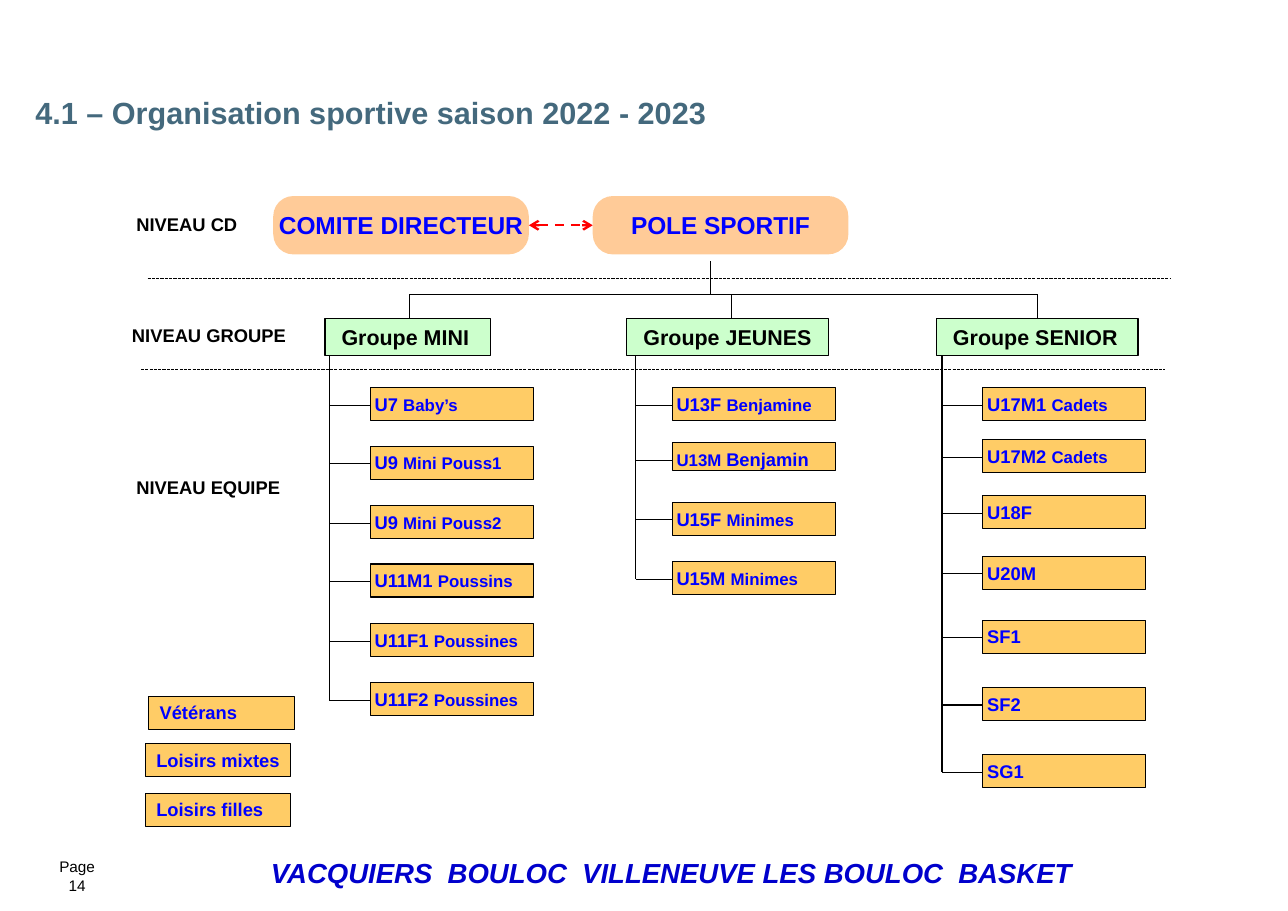
from dataclasses import dataclass

from pptx import Presentation
from pptx.dml.color import RGBColor
from pptx.enum.dml import MSO_LINE
from pptx.enum.shapes import MSO_CONNECTOR, MSO_SHAPE
from pptx.enum.text import MSO_ANCHOR, MSO_AUTO_SIZE, PP_ALIGN
from pptx.oxml.ns import qn
from pptx.util import Inches, Pt

# Content: every length is in inches
TITLE = "4.1 – Organisation sportive saison 2022 - 2023"
CLUB = "VACQUIERS  BOULOC  VILLENEUVE LES BOULOC  BASKET"
PAGE = "Page 14"
LEVELS = [("NIVEAU CD", 1.14, 1.89), ("NIVEAU GROUPE", 1.1, 2.89),
          ("NIVEAU EQUIPE", 1.14, 4.27)]
BOARDS = [("COMITE DIRECTEUR", 2.48), ("POLE SPORTIF", 5.38)]
LEISURE = [("Vétérans", 1.35, 6.32), ("Loisirs mixtes", 1.32, 6.75),
           ("Loisirs filles", 1.32, 7.2)]
GROUPS = [
    dict(name="Groupe MINI", left=2.95, width=1.5, drop=3.72, spine=2.99,
         team_left=3.36, teams=[
             (3.52, "U7", "Baby’s"), (4.05, "U9", "Mini Pouss1"),
             (4.59, "U9", "Mini Pouss2"), (5.12, "U11M1", "Poussins"),
             (5.66, "U11F1", "Poussines"), (6.2, "U11F2", "Poussines")]),
    dict(name="Groupe JEUNES", left=5.69, width=1.83, drop=6.64, spine=5.77,
         team_left=6.1, teams=[
             (3.52, "U13F", "Benjamine"), (4.02, "U13M", "Benjamin"),
             (4.56, "U15F", "Minimes"), (5.1, "U15M", "Minimes")]),
    dict(name="Groupe SENIOR", left=8.5, width=1.83, drop=9.42, spine=8.55,
         team_left=8.92, teams=[
             (3.52, "U17M1", "Cadets"), (3.99, "U17M2", "Cadets"),
             (4.5, "U18F", ""), (5.05, "U20M", ""), (5.63, "SF1", ""),
             (6.24, "SF2", ""), (6.85, "SG1", "")]),
]
COMPACT_TEAM = "U13M"  # lower box, with the larger type on its second part
SEPARATORS = [(1.34, 2.53), (1.28, 3.35)]
SEPARATOR_WIDTH = 9.29

BUS_TOP, BUS_BOTTOM, POLE_STEM = 2.67, 2.9, (6.45, 2.37)
GROUP_TOP, GROUP_HEIGHT = 2.89, 0.34
TEAM_WIDTH, TEAM_HEIGHT, COMPACT_HEIGHT, TICK_DROP = 1.48, 0.3, 0.25, 0.16
BOARD_TOP, BOARD_WIDTH, BOARD_HEIGHT = 1.78, 2.32, 0.53


@dataclass(frozen=True)
class Theme:
    font: str = "Arial"
    ink: str = "000000"
    title: str = "44697D"
    club: str = "0000CC"
    team_text: str = "0000FF"
    team_fill: str = "FFCC66"
    group_fill: str = "CCFFCC"
    board_fill: str = "FF9933"
    link: str = "FF0000"
    title_size: float = 20
    club_size: float = 18
    board_size: float = 16
    group_size: float = 14
    label_size: float = 12
    detail_size: float = 11
    page_size: float = 10
    rule: float = 0.75


THEME = Theme()
NO_INSET = (0, 0, 0, 0)
TEAM_INSET = (0.04, 0.05, 0.04, 0.05)
LABEL_INSET = (0.1, 0.05, 0.1, 0.05)
GROUP_INSET = (0.15, 0.05, 0.05, 0.05)

deck = Presentation()
deck.slide_width, deck.slide_height = Inches(11.69), Inches(8.27)
slide = deck.slides.add_slide(deck.slide_layouts[5])


def write(holder, runs, color, inset=LABEL_INSET, align=PP_ALIGN.LEFT,
          anchor=MSO_ANCHOR.TOP, wrap=True, bold=True, italic=False):
    """Put (text, size) runs into one paragraph of the holder."""
    frame = holder.text_frame
    sides = ("margin_left", "margin_top", "margin_right", "margin_bottom")
    settings = dict(zip(sides, map(Inches, inset)), word_wrap=wrap,
                    auto_size=MSO_AUTO_SIZE.NONE, vertical_anchor=anchor)
    for key, value in settings.items():
        setattr(frame, key, value)
    paragraph = frame.paragraphs[0]
    paragraph.alignment = align
    for text, size in runs:
        run = paragraph.add_run()
        run.text = text
        look = dict(name=THEME.font, size=Pt(size), bold=bold, italic=italic)
        for key, value in look.items():
            setattr(run.font, key, value)
        run.font.color.rgb = RGBColor.from_string(color)
    return paragraph


def label(place, *args, **options):
    write(slide.shapes.add_textbox(*map(Inches, place)), *args, **options)


def box(place, fill, preset=MSO_SHAPE.RECTANGLE, outlined=True):
    shape = slide.shapes.add_shape(preset, *map(Inches, place))
    shape.shadow.inherit = False
    shape.fill.solid()
    shape.fill.fore_color.rgb = RGBColor.from_string(fill)
    if outlined:
        shape.line.color.rgb = RGBColor.from_string(THEME.ink)
        shape.line.width = Pt(THEME.rule)
    else:
        shape.line.fill.background()
    return shape


def rule(x1, y1, x2, y2, color=THEME.ink, width=THEME.rule, dash=None):
    line = slide.shapes.add_connector(
        MSO_CONNECTOR.STRAIGHT, *map(Inches, (x1, y1, x2, y2)))
    line.line.color.rgb = RGBColor.from_string(color)
    line.line.width = Pt(width)
    if dash:
        line.line.dash_style = dash
    properties = line._element.spPr
    properties.append(properties.makeelement(qn("a:effectLst"), {}))
    return line


def draw_board(name, left):
    board = box((left, BOARD_TOP, BOARD_WIDTH, BOARD_HEIGHT), THEME.board_fill,
                MSO_SHAPE.ROUNDED_RECTANGLE, outlined=False)
    board.adjustments[0] = 0.345
    tint = board._element.spPr.find(".//" + qn("a:srgbClr"))
    tint.append(tint.makeelement(qn("a:alpha"), {"val": "50000"}))
    write(board, [(name, THEME.board_size)], THEME.team_text,
          align=PP_ALIGN.CENTER, anchor=MSO_ANCHOR.MIDDLE, wrap=False)


def draw_team(left, top, code, detail):
    sizes, height = (THEME.label_size, THEME.detail_size), TEAM_HEIGHT
    if code == COMPACT_TEAM:
        sizes, height = sizes[::-1], COMPACT_HEIGHT
    parts = (code + " ", detail) if detail else (code,)
    write(box((left, top, TEAM_WIDTH, height), THEME.team_fill),
          zip(parts, sizes), THEME.team_text, TEAM_INSET)


def draw_group(name, left, width, drop, spine, team_left, teams):
    rule(drop, BUS_TOP, drop, BUS_BOTTOM)
    rule(spine, GROUP_TOP + GROUP_HEIGHT, spine, teams[-1][0] + TICK_DROP)
    write(box((left, GROUP_TOP, width, GROUP_HEIGHT), THEME.group_fill),
          [(name, THEME.group_size)], THEME.ink, GROUP_INSET)
    for top, code, detail in teams:
        rule(spine, top + TICK_DROP, team_left, top + TICK_DROP)
        draw_team(team_left, top, code, detail)


title = slide.shapes.title
for side, length in dict(left=0.32, top=0.76, width=10.78, height=0.55).items():
    setattr(title, side, Inches(length))
write(title, [(TITLE, THEME.title_size)], THEME.title, NO_INSET,
      anchor=MSO_ANCHOR.MIDDLE).line_spacing = 0.95

footer = dict(inset=NO_INSET, align=PP_ALIGN.CENTER, anchor=MSO_ANCHOR.MIDDLE)
label((0.95, 7.77, 10.29, 0.3), [(CLUB, THEME.club_size)], THEME.club,
      italic=True, **footer)
label((0.45, 7.82, 0.5, 0.26), [(PAGE, THEME.page_size)], THEME.ink,
      bold=False, **footer)

for left, y in SEPARATORS:
    rule(left, y, left + SEPARATOR_WIDTH, y, width=0.25, dash=MSO_LINE.LONG_DASH)
for name, left, top in LEVELS:
    label((left, top, 1.93, 0.3), [(name, THEME.label_size)], THEME.ink)

for board in BOARDS:
    draw_board(*board)
board_middle = BOARD_TOP + BOARD_HEIGHT / 2
link = rule(BOARDS[0][1] + BOARD_WIDTH, board_middle, BOARDS[1][1], board_middle,
            THEME.link, 1.5, MSO_LINE.DASH)
stroke = link._element.spPr.find(qn("a:ln"))
for end in ("a:headEnd", "a:tailEnd"):
    stroke.append(stroke.makeelement(qn(end), {"type": "arrow"}))

stem_x, stem_top = POLE_STEM
rule(stem_x, stem_top, stem_x, BUS_TOP)
rule(GROUPS[0]["drop"], BUS_TOP, GROUPS[-1]["drop"], BUS_TOP)
for group in GROUPS:
    draw_group(**group)
for name, left, top in LEISURE:
    write(box((left, top, 1.32, TEAM_HEIGHT), THEME.team_fill),
          [(name, THEME.label_size)], THEME.team_text)

deck.save("out.pptx")
